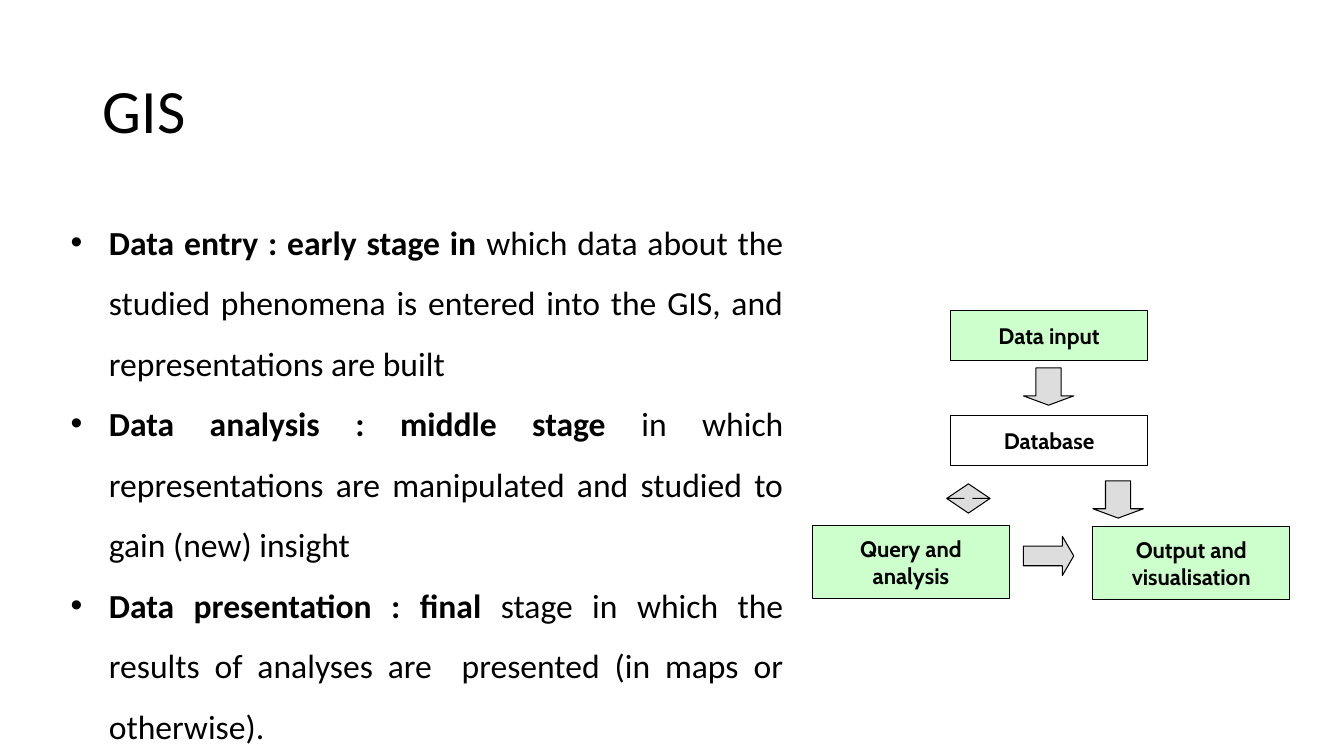
from pptx import Presentation
from pptx import util as u
from pptx.dml.color import RGBColor
from pptx.enum import shapes, text


def color(hex_string):
    return RGBColor.from_string(hex_string)


def add_outlined(group, kind, box, fill):
    shape = group.shapes.add_shape(kind, *[u.Inches(value) for value in box])
    shape.shadow.inherit = False
    shape.fill.solid()
    shape.fill.fore_color.rgb = color(fill)
    shape.line.color.rgb = color("000000")
    shape.line.width = u.Pt(0.75)
    return shape


presentation = Presentation()
presentation.slide_width = u.Inches(13.33)
presentation.slide_height = u.Inches(7.5)
slide = presentation.slides.add_slide(presentation.slide_layouts[1])

# Title
title = slide.shapes.title
title.left, title.top = u.Inches(0.92), u.Inches(0.4)
title.width, title.height = u.Inches(11.5), u.Inches(1.45)
title.text_frame.text = "GIS"
title.text_frame.vertical_anchor = text.MSO_ANCHOR.MIDDLE
paragraph = title.text_frame.paragraphs[0]
paragraph.alignment = text.PP_ALIGN.LEFT
paragraph.line_spacing = 0.9
paragraph.font.name = "Calibri"
paragraph.font.size = u.Pt(44)
paragraph.font.color.rgb = color("000000")

# Stages of GIS work: bold lead, then explanation
stages = [
    ("Data entry : early stage in ",
     "which data about the studied phenomena is entered into the GIS, and representations are built"),
    ("Data analysis : middle stage ",
     "in which representations are manipulated and studied to gain (new) insight"),
    ("Data presentation : final ",
     "stage in which the results of analyses are  presented (in maps or otherwise)."),
]
body = slide.placeholders[1]
body.left, body.top = u.Inches(0.6), u.Inches(1.95)
body.width, body.height = u.Inches(7.27), u.Inches(5.55)
frame = body.text_frame
frame.word_wrap = True
frame.auto_size = text.MSO_AUTO_SIZE.SHAPE_TO_FIT_TEXT
for index, (lead, explanation) in enumerate(stages):
    paragraph = frame.add_paragraph() if index else frame.paragraphs[0]
    properties = paragraph._p.get_or_add_pPr()
    properties.set("marL", str(u.Inches(0.38)))
    properties.set("indent", str(-u.Inches(0.38)))
    paragraph.alignment = text.PP_ALIGN.JUSTIFY
    paragraph.line_spacing = 1.5
    paragraph.space_before = u.Pt(0)
    for words, bold in ((lead, True), (explanation, False)):
        run = paragraph.add_run()
        run.text = words
        run.font.name = "Calibri"
        run.font.size = u.Pt(24)
        run.font.bold = bold
        run.font.color.rgb = color("000000")

# Flow diagram: boxes
diagram = slide.shapes.add_group_shape()
box_width = 1.95
boxes = [
    ("Data input", 9.43, 3.08, 0.5, "CCFFCC"),
    ("Output and\nvisualisation", 10.84, 5.22, 0.73, "CCFFCC"),
    ("Query and\nanalysis", 8.06, 5.21, 0.73, "CCFFCC"),
    ("Database", 9.43, 4.12, 0.5, "FFFFFF"),
]
for label, left, top, height, fill in boxes:
    shape = add_outlined(diagram, shapes.MSO_SHAPE.RECTANGLE,
                         (left, top, box_width, height), fill)
    frame = shape.text_frame
    frame.text = label
    frame.word_wrap = False
    frame.vertical_anchor = text.MSO_ANCHOR.MIDDLE
    for paragraph in frame.paragraphs:
        paragraph.alignment = text.PP_ALIGN.CENTER
        paragraph.font.name = "Cabin"
        paragraph.font.size = u.Pt(16)
        paragraph.font.bold = True
        paragraph.font.color.rgb = color("000000")

# Flow diagram: block arrows with the length of their heads
arrows = [
    (shapes.MSO_SHAPE.UP_DOWN_ARROW, (9.39, 4.8, 0.43, 0.29), 0.2),
    (shapes.MSO_SHAPE.DOWN_ARROW, (10.84, 4.77, 0.5, 0.37), 0.25),
    (shapes.MSO_SHAPE.DOWN_ARROW, (10.15, 3.65, 0.5, 0.37), 0.25),
    (shapes.MSO_SHAPE.RIGHT_ARROW, (10.15, 5.32, 0.5, 0.39), 0.29),
]
for kind, box, head in arrows:
    arrow = add_outlined(diagram, kind, box, "DDDDDD")
    arrow.adjustments[0] = 0.5
    arrow.adjustments[1] = head

presentation.save("out.pptx")
